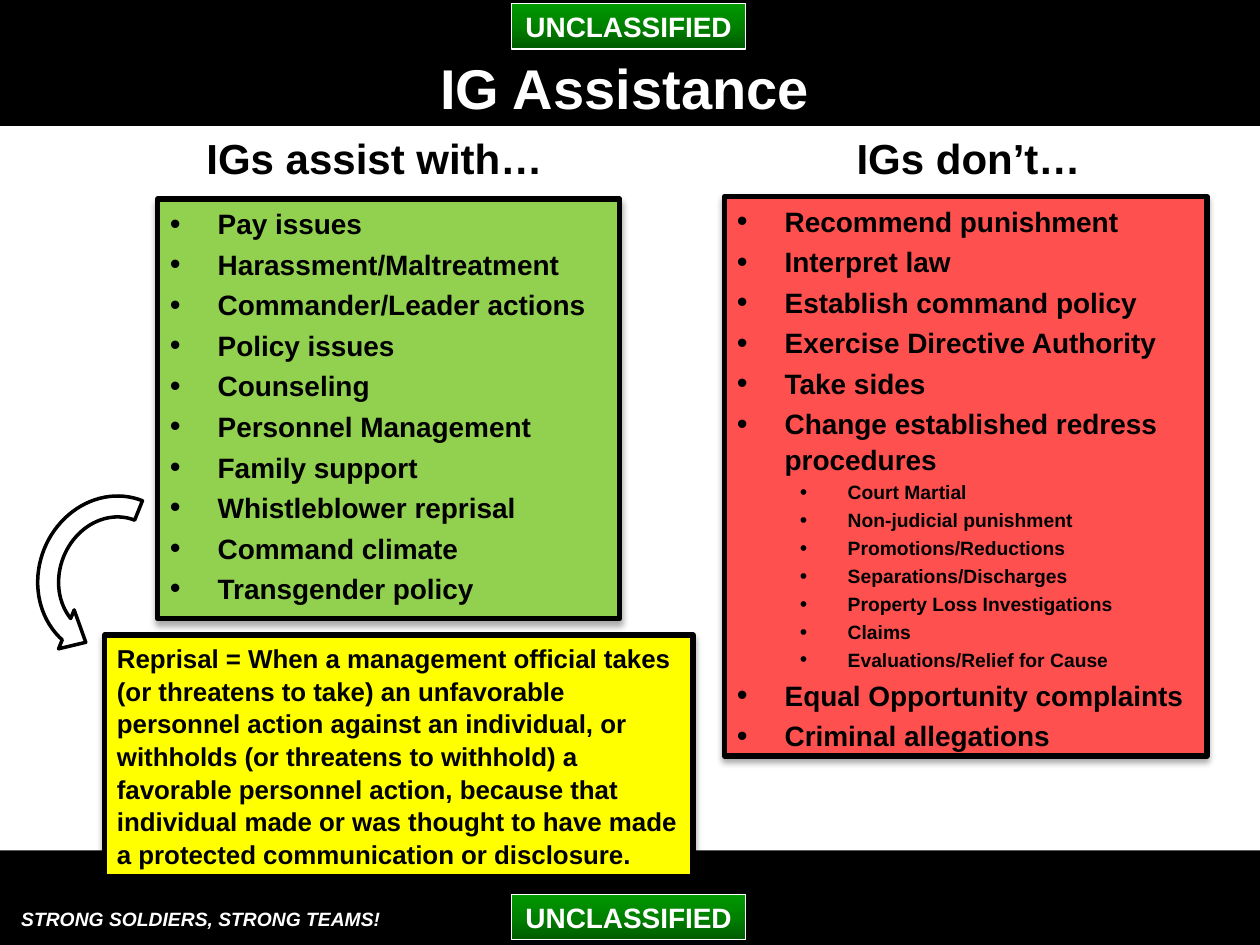
"""Build the IG Assistance slide."""
from copy import deepcopy
from lxml import etree
from pptx import Presentation
from pptx import util as u
from pptx.dml.color import RGBColor
from pptx.enum import shapes as sh, text as tx
from pptx.oxml import ns

INK = {"black": "000000", "white": "FFFFFF", "green": "92D050", "red": "FF5050",
       "yellow": "FFFF00", "dark": "005B00", "mid": "008100", "light": "009900"}
HELP = ["Pay issues", "Harassment/Maltreatment", "Commander/Leader actions",
        "Policy issues", "Counseling", "Personnel Management", "Family support",
        "Whistleblower reprisal", "Command climate", "Transgender policy"]
SUBS = ["Court Martial", "Non-judicial punishment", "Promotions/Reductions",
        "Separations/Discharges", "Property Loss Investigations", "Claims",
        "Evaluations/Relief for Cause"]
DONT = ["Recommend punishment", "Interpret law", "Establish command policy",
        "Exercise Directive Authority", "Take sides",
        "Change established redress procedures", *SUBS,
        "Equal Opportunity complaints", "Criminal allegations"]
NOTE = ("Reprisal = When a management official takes (or threatens to take) an "
        "unfavorable personnel action against an individual, or withholds (or "
        "threatens to withhold) a favorable personnel action, because that "
        "individual made or was thought to have made a protected communication "
        "or disclosure.")


def block(at, fill=None, line=None, width=3, kind=sh.MSO_SHAPE.RECTANGLE):
    box = page.shapes.add_shape(kind, *map(u.Inches, at))
    box.shadow.inherit = False
    if fill:
        box.fill.solid()
        box.fill.fore_color.rgb = RGBColor.from_string(INK[fill])
    else:
        box.fill.background()
    if line:
        box.line.color.rgb = RGBColor.from_string(INK[line])
        box.line.width = u.Pt(width)
    else:
        box.line.fill.background()
    return box


def style(para, size, ink, side=tx.PP_ALIGN.LEFT):
    para.alignment = side
    for run in para.runs:
        font = run.font
        font.name, font.size, font.bold = "Arial", u.Pt(size), True
        font.color.rgb = RGBColor.from_string(INK[ink])


deck = Presentation()
deck.slide_width, deck.slide_height = u.Inches(10), u.Inches(7.5)
page = deck.slides.add_slide(deck.slide_layouts[6])
page.background.fill.solid()
page.background.fill.fore_color.rgb = RGBColor.from_string(INK["black"])
block((0, 1, 10, 5.75), "white")

for top in (0.03, 7.1):
    mark = block((4.06, top, 1.86, 0.36), line="white", width=0.75)
    mark.fill.gradient()
    mark.fill.gradient_angle = 90
    first = mark.fill.gradient_stops[0]._gs
    first.addnext(deepcopy(first))
    for stop, ink, pos in zip(mark.fill.gradient_stops, ("dark", "mid", "light"), (0, 0.5, 1)):
        stop.color.rgb = RGBColor.from_string(INK[ink])
        stop.position = pos
    frame = mark.text_frame
    frame.margin_left = frame.margin_right = u.Inches(0.05)
    frame.vertical_anchor = tx.MSO_ANCHOR.MIDDLE
    frame.text = "UNCLASSIFIED"
    style(frame.paragraphs[0], 16, "white", tx.PP_ALIGN.CENTER)

left, right = tx.PP_ALIGN.LEFT, tx.PP_ALIGN.RIGHT
for at, words, size, ink, side in (
        ((0.07, 7.15, 3.08, 0.29), "STRONG SOLDIERS, STRONG TEAMS!", 11, "white", left),
        ((-3.43, 0.37, 9.95, 0.64), "IG Assistance", 32, "white", right),
        ((1.54, 1, 2.89, 0.5), "IGs assist with…", 24, "black", left),
        ((6.7, 1, 1.99, 0.5), "IGs don’t…", 24, "black", left)):
    label = page.shapes.add_textbox(*map(u.Inches, at))
    frame = label.text_frame
    frame.word_wrap = side == right
    frame.vertical_anchor = tx.MSO_ANCHOR.MIDDLE
    frame.text = words
    style(frame.paragraphs[0], size, ink, side)
    frame.paragraphs[0].runs[0].font.italic = size == 11

for at, fill, lines in (((1.25, 1.58, 3.67, 3.33), "green", HELP),
                        ((5.75, 1.56, 3.83, 4.44), "red", DONT),
                        ((0.83, 5.04, 4.67, 1.92), "yellow", [NOTE])):
    panel = block(at, fill, "black")
    glow = etree.SubElement(panel._element.spPr.find(ns.qn("a:effectLst")), ns.qn("a:outerShdw"),
                            blurRad=str(u.Pt(3.5)), dist=str(u.Pt(2.2)), dir="5400000")
    tint = etree.SubElement(glow, ns.qn("a:srgbClr"), val=INK["black"])
    etree.SubElement(tint, ns.qn("a:alpha"), val="32000")
    frame = panel.text_frame
    frame.word_wrap = True
    frame.vertical_anchor = tx.MSO_ANCHOR.TOP
    frame.text = "\n".join(lines)
    for spot, (para, words) in enumerate(zip(frame.paragraphs, lines)):
        deep = words in SUBS
        size = 14.8 if words == NOTE else 11 if deep else 16
        para.line_spacing = 1.05
        para.space_before = u.Pt(0.19 * size if spot else 0)
        if words != NOTE:
            para.level = int(deep)
            prop = para._p.get_or_add_pPr()
            prop.set("marL", str(u.Inches(0.88 if deep else 0.38)))
            prop.set("indent", str(u.Inches(-0.38)))
            shade = etree.SubElement(prop, ns.qn("a:buClr"))
            etree.SubElement(shade, ns.qn("a:srgbClr"), val=INK["black"])
            etree.SubElement(prop, ns.qn("a:buSzPct"), val="110000")
            etree.SubElement(prop, ns.qn("a:buFont"), typeface="Arial")
            etree.SubElement(prop, ns.qn("a:buChar"), char="•")
        style(para, size, "black")

arrow = block((0.16, 3.91, 1.46, 1.33), line="black", width=2, kind=sh.MSO_SHAPE.CIRCULAR_ARROW)
arrow.rotation = 291.8
arrow._element.spPr.find(ns.qn("a:xfrm")).set("flipH", "1")

deck.save("out.pptx")
